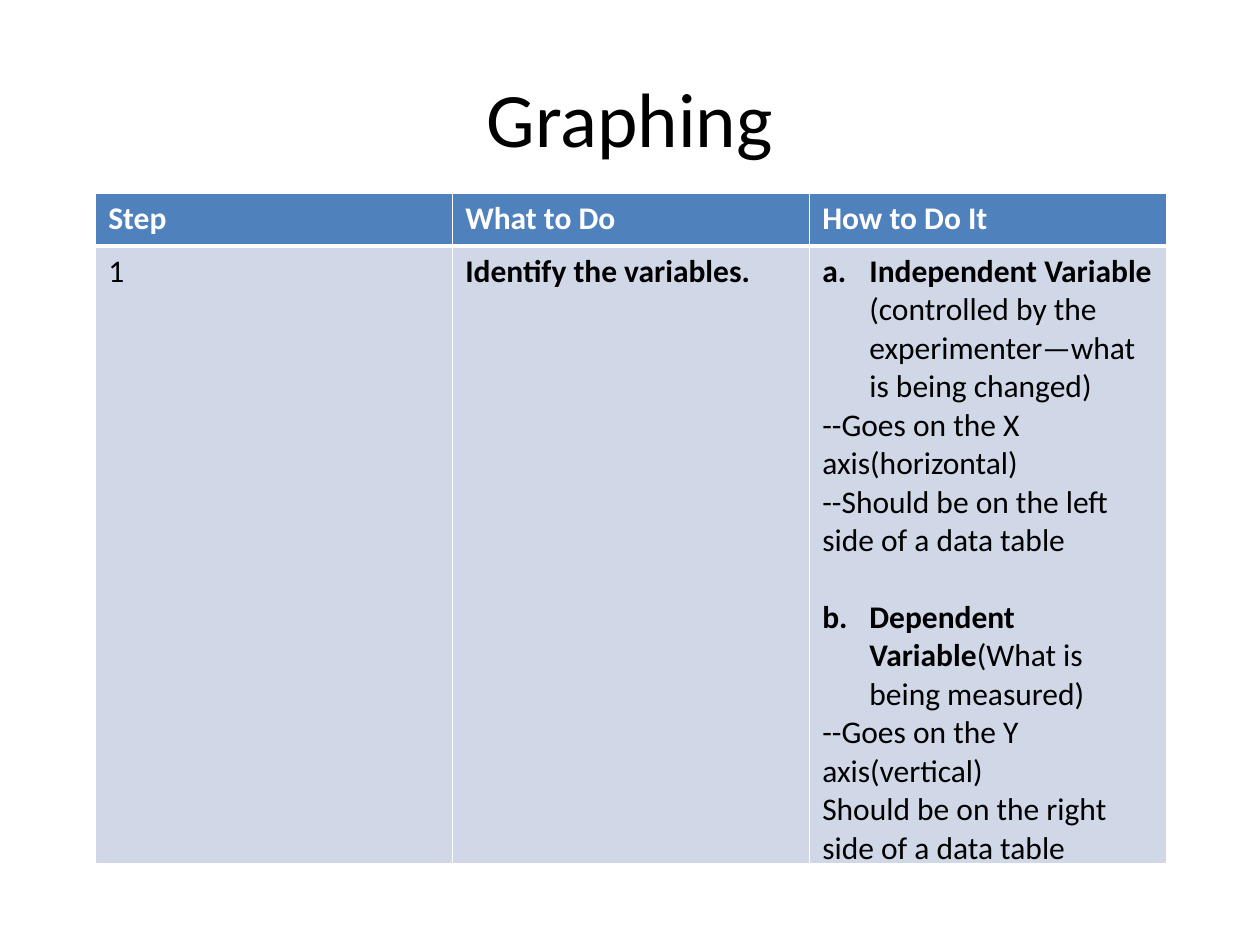
from lxml import etree
from pptx import Presentation
from pptx.dml.color import RGBColor
from pptx.enum.text import MSO_ANCHOR, PP_ALIGN
from pptx.oxml.ns import qn
from pptx.util import Cm, Pt

CENTER = PP_ALIGN.CENTER
MIDDLE = MSO_ANCHOR.MIDDLE
BLACK = RGBColor(0, 0, 0)
WHITE = RGBColor(255, 255, 255)
BLUE = RGBColor(0x4F, 0x81, 0xBD)
PALE = RGBColor(0xD0, 0xD8, 0xE8)

HEAD = ["Step", "What to Do", "How to Do It"]
# Each paragraph: list number (or None), bold part, plain part
BODY = [
    [(None, "", "1")],
    [(None, "Identify the variables.", "")],
    [
        (1, "Independent Variable ",
         "(controlled by the experimenter—what is being changed)"),
        (None, "", "--Goes on the X axis(horizontal)"),
        (None, "", "--Should be on the left side of a data table"),
        (2, "Dependent Variable", "(What is being measured)"),
        (None, "", "--Goes on the Y axis(vertical)"),
        (None, "", "Should be on the right side of a data table"),
    ],
]


class Page:
    font = "Calibri"
    size = Pt(18)
    indent = Cm(0.95)
    gap = Pt(22)

    def __init__(self, slide):
        self.slide = slide

    def style(self, run, size, color, bold):
        run.font.name = self.font
        run.font.size = size
        run.font.color.rgb = color
        run.font.bold = bold

    def title(self, text, left, top, width, height):
        frame = self.slide.shapes.add_textbox(left, top, width, height).text_frame
        frame.word_wrap = True
        frame.vertical_anchor = MIDDLE
        frame.text = text
        para = frame.paragraphs[0]
        para.alignment = CENTER
        self.style(para.runs[0], Pt(44), BLACK, False)

    def number(self, para, start):
        """Make the paragraph a lettered list item with a hanging indent."""
        props = para._p.get_or_add_pPr()
        props.set("marL", str(self.indent))
        props.set("indent", str(-self.indent))
        mark = etree.SubElement(props, qn("a:buAutoNum"), type="alphaLcPeriod")
        if start > 1:
            mark.set("startAt", str(start))
            para.space_before = self.gap

    def border(self, cell, **widths):
        props = cell._tc.get_or_add_tcPr()
        for side in "LRTB":
            width = Pt(widths.get(side, 1))
            line = etree.SubElement(props, qn("a:ln" + side), w=str(width))
            fill = etree.SubElement(line, qn("a:solidFill"))
            etree.SubElement(fill, qn("a:srgbClr"), val=str(WHITE))

    def cell(self, cell, paras, color, fill, **widths):
        self.border(cell, **widths)
        cell.fill.solid()
        cell.fill.fore_color.rgb = fill
        frame = cell.text_frame
        for i, (start, strong, plain) in enumerate(paras):
            para = frame.add_paragraph() if i else frame.paragraphs[0]
            if start:
                self.number(para, start)
            for text, bold in ((strong, True), (plain, False)):
                if text:
                    run = para.add_run()
                    run.text = text
                    self.style(run, self.size, color, bold)

    def table(self, head, body, left, top, width, heights):
        grid = self.slide.shapes.add_table(
            len(heights), len(head), left, top, width, sum(heights)).table
        for row, height in zip(grid.rows, heights):
            row.height = height
        for i, (name, paras) in enumerate(zip(head, body)):
            self.cell(grid.cell(0, i), [(None, name, "")], WHITE, BLUE, B=3)
            self.cell(grid.cell(1, i), paras, BLACK, PALE, T=3)


def main():
    deck = Presentation()
    deck.slide_width, deck.slide_height = Cm(25.4), Cm(19.05)
    page = Page(deck.slides.add_slide(deck.slide_layouts[6]))
    page.title("Graphing", Cm(1.27), Cm(0.76), Cm(22.86), Cm(3.18))
    page.table(HEAD, BODY, Cm(1.93), Cm(3.89), Cm(21.59), [Cm(1.07), Cm(12.45)])
    deck.save("out.pptx")


if __name__ == "__main__":
    main()
